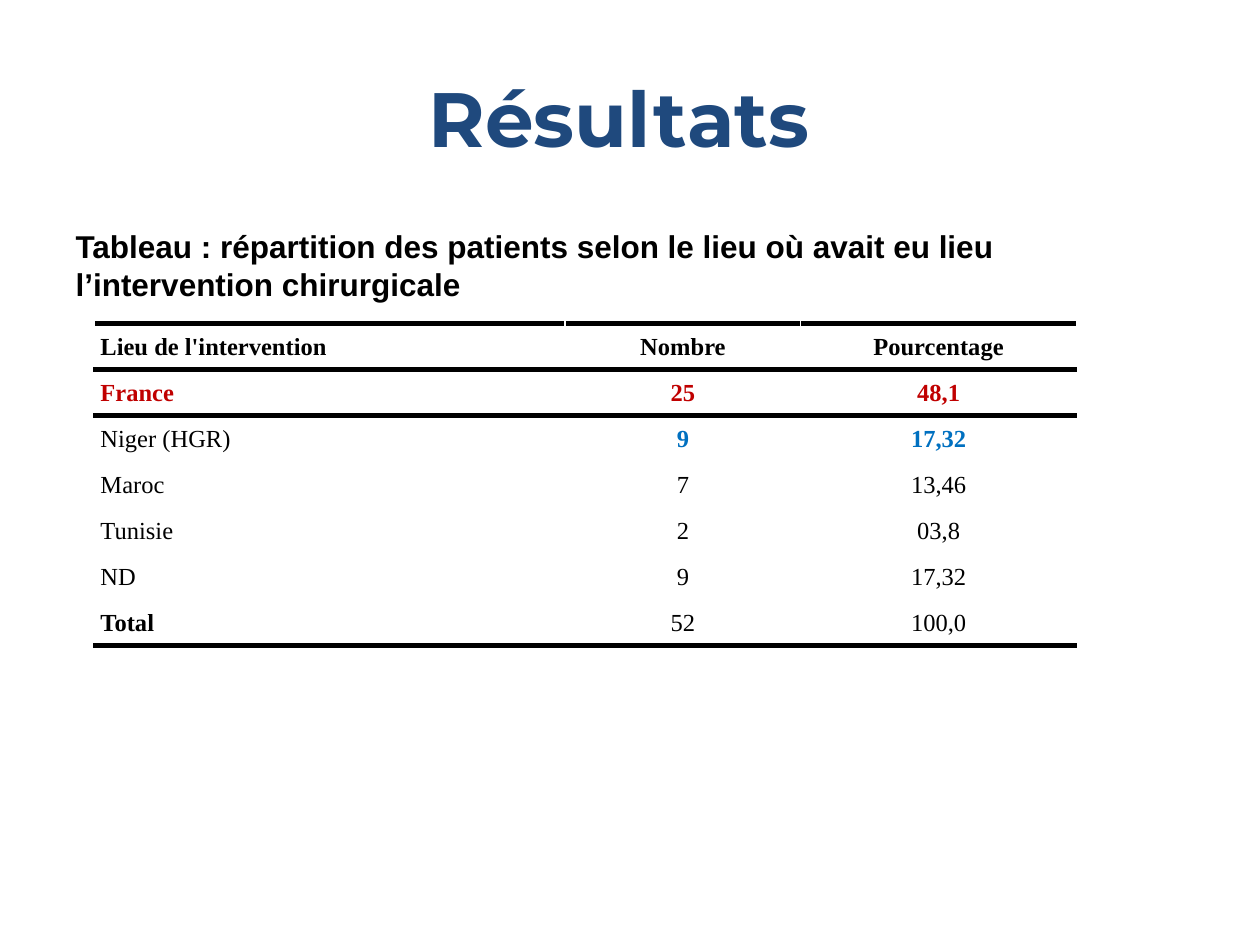
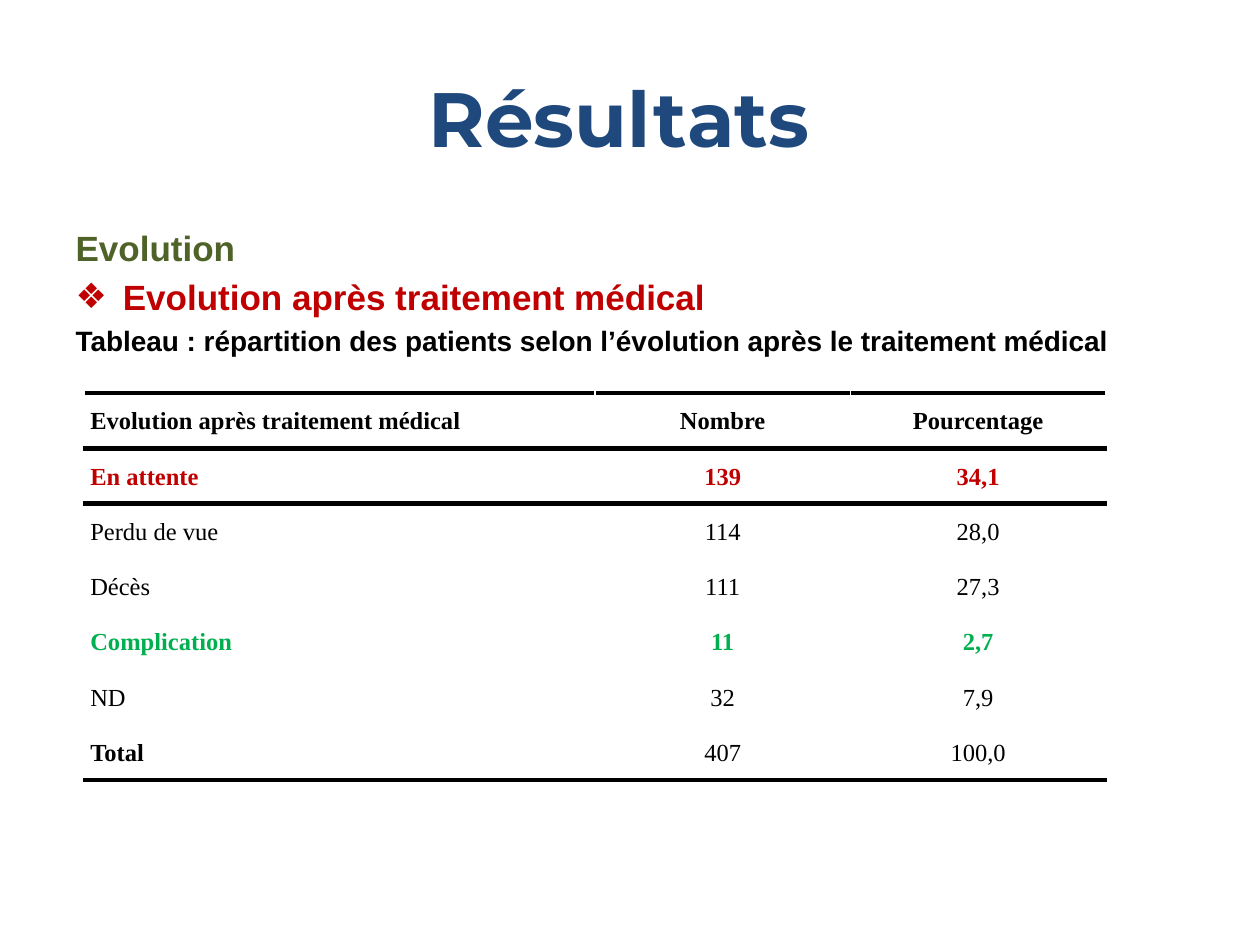
"""Build the two results slides, each with a caption and a ruled table."""

from dataclasses import dataclass

from lxml.etree import SubElement
from pptx import Presentation
from pptx.dml.color import RGBColor
from pptx.enum.text import MSO_ANCHOR, PP_ALIGN
from pptx.oxml.ns import qn
from pptx.presentation import Presentation as Deck
from pptx.slide import Slide
from pptx.table import _Cell
from pptx.text.text import _Paragraph
from pptx.util import Length, Pt

NAVY = RGBColor(0x1F, 0x49, 0x7D)
BLACK = RGBColor(0x00, 0x00, 0x00)
WHITE = RGBColor(0xFF, 0xFF, 0xFF)
RED = RGBColor(0xC0, 0x00, 0x00)
BLUE = RGBColor(0x00, 0x70, 0xC0)
GREEN = RGBColor(0x00, 0xB0, 0x50)
OLIVE = RGBColor(0x4F, 0x62, 0x28)

TITLE_FONT = "Montserrat"
BODY_FONT = "Arial"
TABLE_FONT = "Times New Roman"
RULE_WIDTH = Pt(3)
SIDE_MARGIN = Pt(3.6)
BULLET_INDENT = Pt(27)


@dataclass(frozen=True)
class Tone:
    color: RGBColor = BLACK
    bold: bool = False


PLAIN = Tone()
STRONG = Tone(bold=True)
RED_STRONG = Tone(RED, True)
BLUE_STRONG = Tone(BLUE, True)
GREEN_STRONG = Tone(GREEN, True)


@dataclass(frozen=True)
class Row:
    label: str
    count: str
    share: str
    label_tone: Tone = PLAIN
    value_tone: Tone = PLAIN


@dataclass(frozen=True)
class BodyLine:
    text: str
    size: Length
    color: RGBColor = BLACK
    bullet: str = ""


@dataclass(frozen=True)
class ResultTable:
    left: Length
    top: Length
    column_widths: tuple[Length, ...]
    row_height: Length
    vertical_margin: Length
    rows: tuple[Row, ...]


@dataclass(frozen=True)
class ResultPage:
    lines: tuple[BodyLine, ...]
    table: ResultTable


PAGES = (
    ResultPage(
        lines=(
            BodyLine(
                "Tableau : répartition des patients selon le lieu où avait eu lieu "
                "l’intervention chirurgicale",
                Pt(18),
            ),
        ),
        table=ResultTable(
            left=Pt(53.8),
            top=Pt(185),
            column_widths=(Pt(269.2), Pt(134.6), Pt(157.6)),
            row_height=Pt(26.26),
            vertical_margin=Pt(0),
            rows=(
                Row("Lieu de l'intervention", "Nombre", "Pourcentage", STRONG, STRONG),
                Row("France", "25", "48,1", RED_STRONG, RED_STRONG),
                Row("Niger (HGR)", "9", "17,32", PLAIN, BLUE_STRONG),
                Row("Maroc", "7", "13,46"),
                Row("Tunisie", "2", "03,8"),
                Row("ND", "9", "17,32"),
                Row("Total", "52", "100,0", STRONG),
            ),
        ),
    ),
    ResultPage(
        lines=(
            BodyLine("Evolution", Pt(20), OLIVE),
            BodyLine("Evolution après traitement médical", Pt(20), RED, "❖"),
            BodyLine(
                "Tableau : répartition des patients selon l’évolution après le "
                "traitement médical",
                Pt(16),
            ),
        ),
        table=ResultTable(
            left=Pt(48),
            top=Pt(224.6),
            column_widths=(Pt(292), Pt(146), Pt(146)),
            row_height=Pt(31.6),
            vertical_margin=Pt(3.6),
            rows=(
                Row("Evolution après traitement médical", "Nombre", "Pourcentage",
                    STRONG, STRONG),
                Row("En attente", "139", "34,1", RED_STRONG, RED_STRONG),
                Row("Perdu de vue", "114", "28,0"),
                Row("Décès", "111", "27,3"),
                Row("Complication", "11", "2,7", GREEN_STRONG, GREEN_STRONG),
                Row("ND", "32", "7,9"),
                Row("Total", "407", "100,0", STRONG),
            ),
        ),
    ),
)


def format_runs(paragraph: _Paragraph, font: str, size: Length, tone: Tone) -> None:
    """Give every run of a paragraph the same font, size, colour and weight."""
    for span in paragraph.runs:
        span.font.name = font
        span.font.size = size
        span.font.bold = tone.bold
        span.font.color.rgb = tone.color


def set_bullet(paragraph: _Paragraph, bullet: str) -> None:
    """Set a hanging bullet, or remove the inherited one."""
    properties = paragraph._p.get_or_add_pPr()
    indent = BULLET_INDENT if bullet else Pt(0)
    properties.set("marL", str(indent))
    properties.set("indent", str(-indent))
    if bullet:
        SubElement(properties, qn("a:buChar"), char=bullet)
    else:
        SubElement(properties, qn("a:buNone"))


def add_rule(cell: _Cell, edge: str) -> None:
    """Draw a solid black border on one edge of a cell."""
    properties = cell._tc.get_or_add_tcPr()
    line = SubElement(properties, qn(f"a:{edge}"), w=str(RULE_WIDTH))
    fill = SubElement(line, qn("a:solidFill"))
    SubElement(fill, qn("a:srgbClr"), val=str(BLACK))


def add_title(page: Slide) -> None:
    """Place and format the shared title."""
    title = page.shapes.title
    title.left, title.top, title.width, title.height = Pt(36), Pt(21.6), Pt(648), Pt(90)
    title.text_frame.text = "Résultats "
    title.text_frame.vertical_anchor = MSO_ANCHOR.MIDDLE
    paragraph = title.text_frame.paragraphs[0]
    paragraph.alignment = PP_ALIGN.CENTER
    format_runs(paragraph, TITLE_FONT, Pt(44), Tone(NAVY, True))


def add_body(page: Slide, lines: tuple[BodyLine, ...]) -> None:
    """Fill the body placeholder with headings and the table caption."""
    body = page.placeholders[1]
    body.left, body.top, body.width, body.height = Pt(36), Pt(126), Pt(648), Pt(356.4)
    body.text_frame.text = "\n".join(line.text for line in lines)
    for paragraph, line in zip(body.text_frame.paragraphs, lines):
        set_bullet(paragraph, line.bullet)
        format_runs(paragraph, BODY_FONT, line.size, Tone(line.color, True))


def fill_cell(cell: _Cell, text: str, tone: Tone, alignment: PP_ALIGN, margin: Length) -> None:
    """Write one table cell on a white ground."""
    cell.fill.solid()
    cell.fill.fore_color.rgb = WHITE
    cell.vertical_anchor = MSO_ANCHOR.MIDDLE
    cell.margin_left = cell.margin_right = SIDE_MARGIN
    cell.margin_top = cell.margin_bottom = margin
    cell.text_frame.text = text
    paragraph = cell.text_frame.paragraphs[0]
    paragraph.alignment = alignment
    paragraph.line_spacing = 1.07
    format_runs(paragraph, TABLE_FONT, Pt(14), tone)


def add_result_table(page: Slide, layout: ResultTable) -> None:
    """Draw a table ruled above and below its header and below its last row."""
    row_count, column_count = len(layout.rows), len(layout.column_widths)
    frame = page.shapes.add_table(
        row_count, column_count, layout.left, layout.top,
        Length(sum(layout.column_widths)), Length(layout.row_height * row_count),
    )
    table = frame.table
    table.first_row = table.horz_banding = False
    for column, width in zip(table.columns, layout.column_widths):
        column.width = width
    edges = {0: ("lnT", "lnB"), 1: ("lnT",), row_count - 1: ("lnB",)}
    for index, row in enumerate(layout.rows):
        table.rows[index].height = layout.row_height
        contents = (
            (row.label, row.label_tone, PP_ALIGN.LEFT),
            (row.count, row.value_tone, PP_ALIGN.CENTER),
            (row.share, row.value_tone, PP_ALIGN.CENTER),
        )
        for cell, (text, tone, alignment) in zip(table.rows[index].cells, contents):
            for edge in edges.get(index, ()):
                add_rule(cell, edge)
            fill_cell(cell, text, tone, alignment, layout.vertical_margin)


def add_result_page(deck: Deck, content: ResultPage) -> None:
    """Add one slide with its title, body text and table."""
    page = deck.slides.add_slide(deck.slide_layouts[1])
    add_title(page)
    add_body(page, content.lines)
    add_result_table(page, content.table)


def main() -> None:
    """Build and save the deck."""
    deck = Presentation()
    deck.slide_width, deck.slide_height = Pt(720), Pt(540)
    for content in PAGES:
        add_result_page(deck, content)
    deck.save("out.pptx")


if __name__ == "__main__":
    main()
